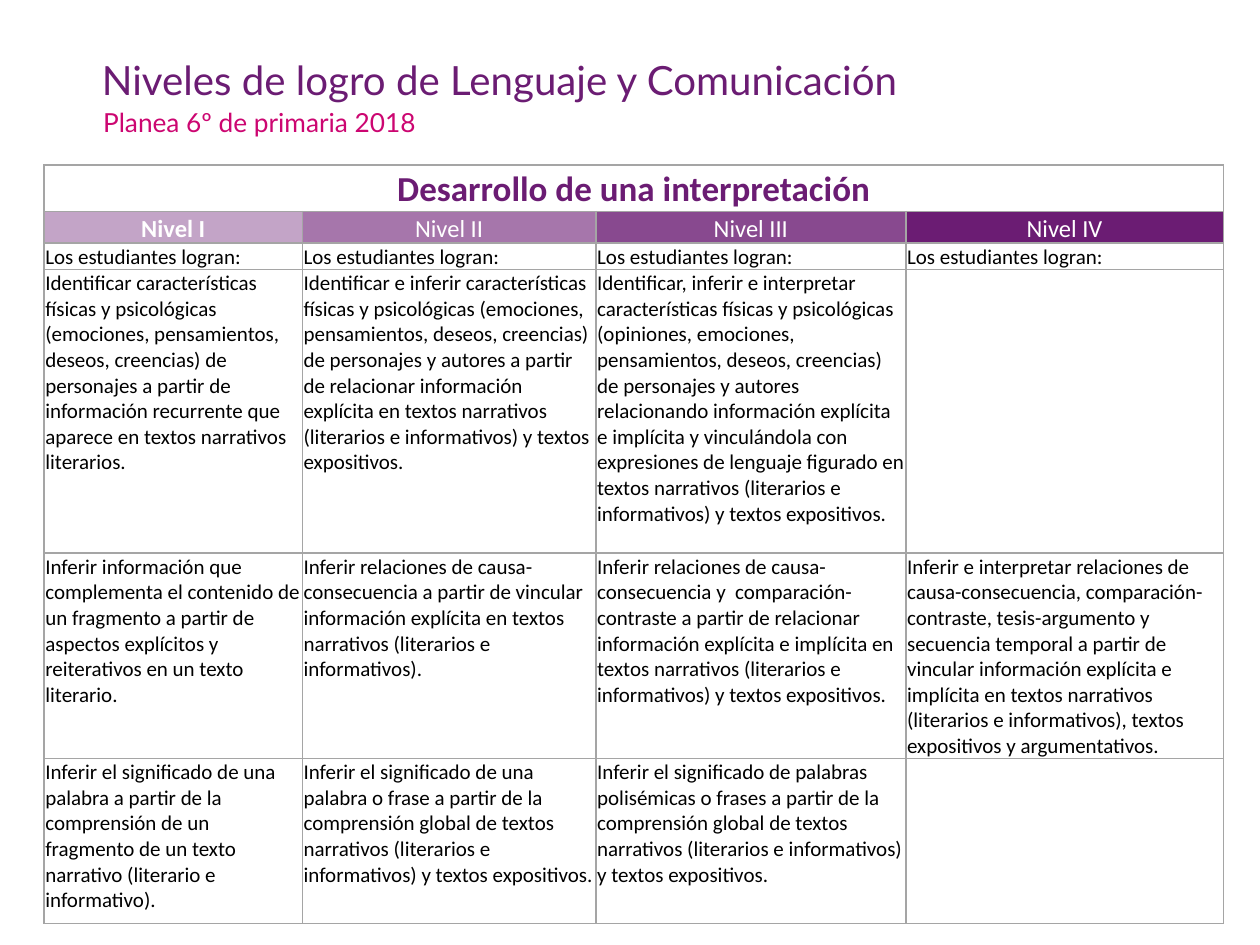
import pptx
import pptx.util
import pptx.dml.color
import pptx.enum.text
import pptx.oxml.ns
from dataclasses import dataclass
from lxml import etree

Inches = pptx.util.Inches
Pt = pptx.util.Pt
ALIGN = pptx.enum.text.PP_ALIGN


@dataclass(frozen=True)
class Theme:
    purple: str = "6B1C73"
    pink: str = "CC0671"
    white: str = "FFFFFF"
    black: str = "000000"
    border: str = "A5A5A5"
    heading_font: str = "Lato"
    table_font: str = "Calibri"
    title_size: int = 23
    subtitle_size: int = 15
    banner_size: int = 20
    level_size: int = 14
    body_size: int = 12


theme = Theme()


def write_text(text_frame, text, font, size, color, bold=False, align=ALIGN.LEFT, spacing=1.0):
    paragraph = text_frame.paragraphs[0]
    paragraph.alignment = align
    paragraph.line_spacing = spacing
    run = paragraph.add_run()
    run.text = text
    run.font.name = font
    run.font.size = Pt(size)
    run.font.bold = bold
    run.font.color.rgb = pptx.dml.color.RGBColor.from_string(color)


def style_cell(cell, color, opacity=100):
    """Draw the four borders, then fill the cell; opacity is in percent."""
    properties = cell._tc.get_or_add_tcPr()
    qn = pptx.oxml.ns.qn
    for side in ("a:lnL", "a:lnR", "a:lnT", "a:lnB"):
        line = etree.SubElement(properties, qn(side), w=str(Pt(1)))
        line_fill = etree.SubElement(line, qn("a:solidFill"))
        etree.SubElement(line_fill, qn("a:srgbClr"), val=theme.border)
    cell.fill.solid()
    cell.fill.fore_color.rgb = pptx.dml.color.RGBColor.from_string(color)
    if opacity < 100:
        fill_color = properties.find(qn("a:solidFill")).find(qn("a:srgbClr"))
        etree.SubElement(fill_color, qn("a:alpha"), val=str(opacity * 1000))


presentation = pptx.Presentation()
presentation.slide_width = Inches(10)
presentation.slide_height = Inches(7.5)
slide = presentation.slides.add_slide(presentation.slide_layouts[6])

# Headings
headings = [
    ("Niveles de logro de Lenguaje y Comunicación", 0.71, 0.43, 0.53,
     theme.title_size, theme.purple, 0.9),
    ("Planea 6º de primaria 2018", 0.72, 0.74, 1.15,
     theme.subtitle_size, theme.pink, 1.2),
]
for text, left, top, height, size, color, spacing in headings:
    box = slide.shapes.add_textbox(Inches(left), Inches(top), Inches(8.62), Inches(height))
    box.text_frame.word_wrap = True
    write_text(box.text_frame, text, theme.heading_font, size, color, spacing=spacing)

# Table content
levels = ["Nivel I", "Nivel II", "Nivel III", "Nivel IV"]
level_opacities = [40, 60, 80, 100]
body_rows = [
    ["Los estudiantes logran:"] * len(levels),
    [
        "Identificar características físicas y psicológicas (emociones, pensamientos, deseos, "
        "creencias) de personajes a partir de información recurrente que aparece en textos "
        "narrativos literarios.",
        "Identificar e inferir características físicas y psicológicas (emociones, pensamientos, "
        "deseos, creencias) de personajes y autores a partir de relacionar información explícita "
        "en textos narrativos (literarios e informativos) y textos expositivos.",
        "Identificar, inferir e interpretar características físicas y psicológicas (opiniones, "
        "emociones, pensamientos, deseos, creencias) de personajes y autores relacionando "
        "información explícita e implícita y vinculándola con expresiones de lenguaje figurado "
        "en textos narrativos (literarios e informativos) y textos expositivos.",
        "",
    ],
    [
        "Inferir información que complementa el contenido de un fragmento a partir de aspectos "
        "explícitos y reiterativos en un texto literario.",
        "Inferir relaciones de causa-consecuencia a partir de vincular información explícita en "
        "textos narrativos (literarios e informativos).",
        "Inferir relaciones de causa-consecuencia y  comparación-contraste a partir de relacionar "
        "información explícita e implícita en textos narrativos (literarios e informativos) y "
        "textos expositivos.",
        "Inferir e interpretar relaciones de causa-consecuencia, comparación-contraste, "
        "tesis-argumento y secuencia temporal a partir de vincular información explícita e "
        "implícita en textos narrativos (literarios e informativos), textos expositivos y "
        "argumentativos.",
    ],
    [
        "Inferir el significado de una palabra a partir de la comprensión de un fragmento de un "
        "texto narrativo (literario e informativo).",
        "Inferir el significado de una palabra o frase a partir de la comprensión global de "
        "textos narrativos (literarios e informativos) y textos expositivos.",
        "Inferir el significado de palabras polisémicas o frases a partir de la comprensión "
        "global de textos narrativos (literarios e informativos) y textos expositivos.",
        "",
    ],
]

# Table grid
column_widths = [2.05, 2.33, 2.46, 2.52]
row_heights = [0.37, 0.25, 0.21, 2.25, 1.63, 1.31]
table = slide.shapes.add_table(
    len(row_heights), len(column_widths), Inches(0.35), Inches(1.31),
    Inches(sum(column_widths)), Inches(sum(row_heights))).table
for column, width in zip(table.columns, column_widths):
    column.width = Inches(width)
for row, height in zip(table.rows, row_heights):
    row.height = Inches(height)
table.cell(0, 0).merge(table.cell(0, len(levels) - 1))

for row_index, row in enumerate(table.rows):
    for column_index, cell in enumerate(row.cells):
        is_heading = row_index < 2
        side_margin = 0.05 if is_heading else 0.01
        cell.margin_left = cell.margin_right = Inches(side_margin)
        cell.margin_top = Inches(0 if is_heading else 0.01)
        cell.margin_bottom = Inches(0)
        if row_index == 1:
            style_cell(cell, theme.purple, level_opacities[column_index])
            write_text(cell.text_frame, levels[column_index], theme.table_font,
                       theme.level_size, theme.white, bold=column_index == 0,
                       align=ALIGN.CENTER, spacing=1.07)
            continue
        style_cell(cell, theme.white)
        if row_index == 0:
            if column_index == 0:
                write_text(cell.text_frame, "Desarrollo de una interpretación", theme.table_font,
                           theme.banner_size, theme.purple, bold=True,
                           align=ALIGN.CENTER, spacing=1.07)
        elif body_rows[row_index - 2][column_index]:
            write_text(cell.text_frame, body_rows[row_index - 2][column_index],
                       theme.table_font, theme.body_size, theme.black)

presentation.save("out.pptx")
